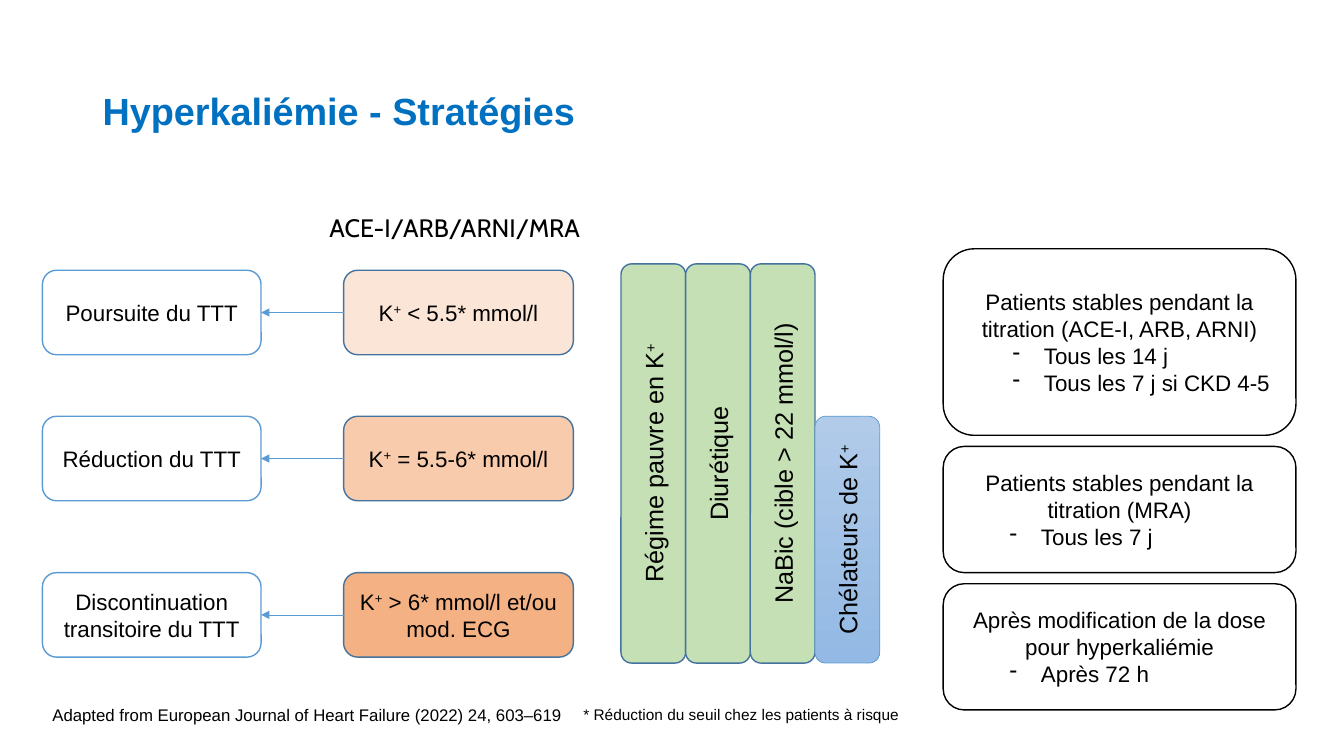
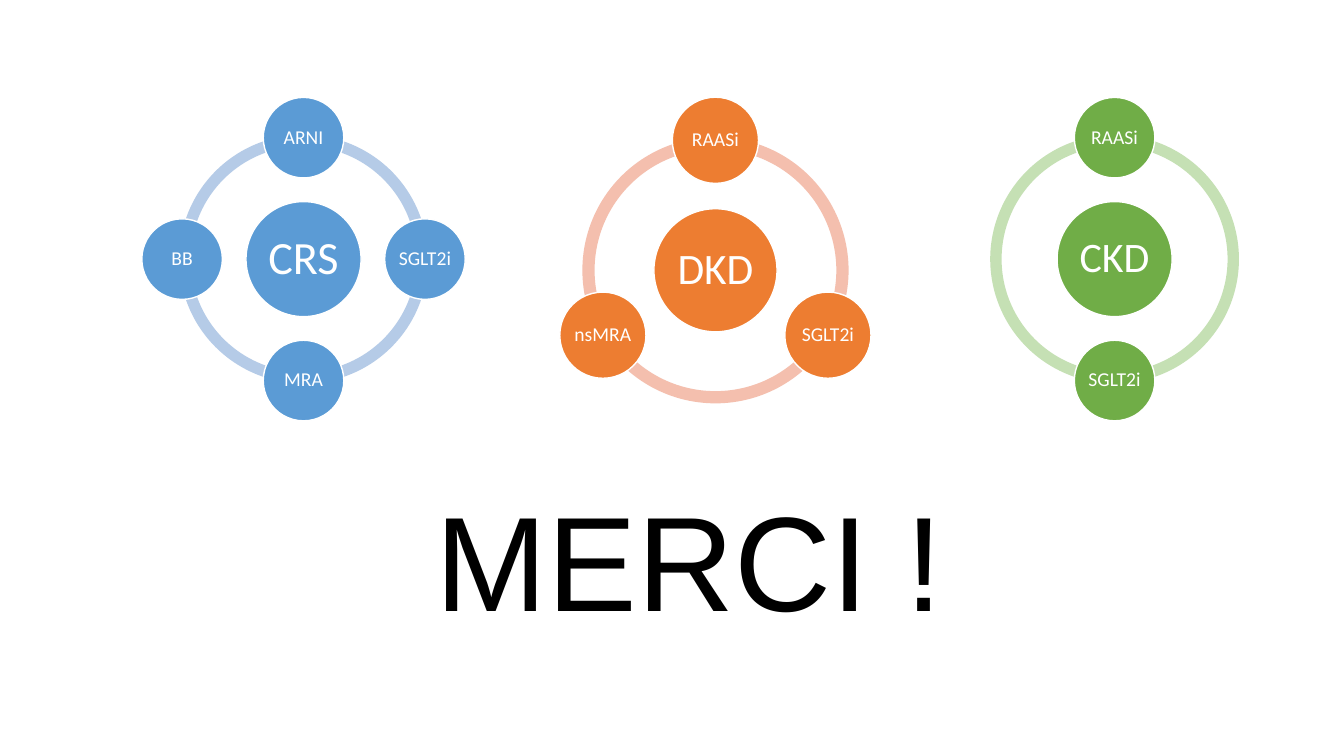
from math import cos, radians, sin

from lxml import etree
from pptx import Presentation
from pptx.dml.color import RGBColor
from pptx.enum.shapes import MSO_CONNECTOR as Connector, MSO_SHAPE as Shape
from pptx.enum.text import MSO_ANCHOR as Anchor, MSO_AUTO_SIZE as AutoSize, PP_ALIGN as Align
from pptx.oxml.ns import qn
from pptx.util import Cm, Pt

# Shared colours and layout
BLACK, WHITE = "000000", "FFFFFF"
TITLE_BLUE, BLUE, DARK_BLUE = "0070C0", "5B9BD5", "43739E"
ORANGE, GREEN, PALE_GREEN = "ED7D31", "70AD47", "C5E0B4"
TITLE_ONLY = 5


def colour(value):
    return RGBColor.from_string(value)


def set_font(para, size, color=BLACK, name="Arial", bold=False):
    para.font.name, para.font.size, para.font.bold = name, Pt(size), bold
    para.font.color.rgb = colour(color)


def add_spans(para, text):
    """Write text; parts between carets are superscript."""
    for index, part in enumerate(text.split("^")):
        if part:
            span = para.add_run()
            span.text = part
            if index % 2:
                span._r.get_or_add_rPr().set("baseline", "30000")


def make_dash_item(para):
    para.level, para.alignment = 1, Align.LEFT
    props = para._p.get_or_add_pPr()
    props.set("marL", str(Cm(2.06)))
    props.set("indent", str(-Cm(0.79)))
    etree.SubElement(props, qn("a:buFontTx"))
    etree.SubElement(props, qn("a:buChar")).set("char", "-")


def fill_text(shape, lines, size, color=BLACK, name="Arial", align=Align.CENTER):
    """Write one paragraph per line; lines starting with "- " become list items."""
    frame = shape.text_frame
    frame.word_wrap, frame.vertical_anchor = True, Anchor.MIDDLE
    for index, line in enumerate(lines):
        para = frame.add_paragraph() if index else frame.paragraphs[0]
        para.alignment = align
        if line.startswith("- "):
            make_dash_item(para)
        add_spans(para, line.removeprefix("- "))
        set_font(para, size, color, name)
    return frame


def add_filled(shapes, kind, left, top, width, height, fill, line=None, weight=1):
    shape = shapes.add_shape(kind, Cm(left), Cm(top), Cm(width), Cm(height))
    shape.shadow.inherit = False
    shape.fill.solid()
    shape.fill.fore_color.rgb = colour(fill)
    if line:
        shape.line.color.rgb = colour(line)
        shape.line.width = Pt(weight)
    else:
        shape.line.fill.background()
    return shape


def add_box(page, place, lines, fill, line, size=16, weight=1):
    box = add_filled(page.shapes, Shape.ROUNDED_RECTANGLE, *place, fill, line, weight)
    fill_text(box, lines, size)
    return box


def add_bar(page, place, text, fill, line=DARK_BLUE, weight=1):
    bar = add_box(page, place, [text], fill, line, 18, weight)
    bar.text_frame._txBody.bodyPr.set("vert", "vert270")
    return bar


def add_label(page, left, top, width, height, text, size, name="Arial"):
    label = page.shapes.add_textbox(Cm(left), Cm(top), Cm(width), Cm(height))
    fill_text(label, [text], size, name=name, align=Align.LEFT)


def add_arrow(page, source, target):
    """Join the left side of source to the right side of target."""
    arrow = page.shapes.add_connector(Connector.STRAIGHT, 0, 0, 0, 0)
    arrow.begin_connect(source, 1)
    arrow.end_connect(target, 3)
    arrow.line.color.rgb = colour(BLUE)
    arrow.line.width = Pt(0.5)
    etree.SubElement(arrow.line._get_or_add_ln(), qn("a:tailEnd")).set("type", "triangle")
    etree.SubElement(arrow._element.spPr, qn("a:effectLst"))


def set_title(page, place, text, size, color=BLACK, bold=False, align=Align.LEFT):
    title = page.shapes.title
    title.left, title.top, title.width, title.height = map(Cm, place)
    frame = fill_text(title, [text], size, align=align)
    frame.auto_size = AutoSize.NONE
    set_font(frame.paragraphs[0], size, color, bold=bold)
    return frame.paragraphs[0]


def add_disc(shapes, x, y, diameter, text, size, fill):
    disc = add_filled(shapes, Shape.OVAL, x - diameter / 2, y - diameter / 2,
                      diameter, diameter, fill, WHITE)
    frame = fill_text(disc, [text], size, WHITE, "Calibri")
    frame.word_wrap = False
    frame.margin_left = frame.margin_right = frame.margin_top = frame.margin_bottom = Cm(0.05)
    frame.paragraphs[0].line_spacing = 0.9


def add_cycle(page, x, y, scale, hub, hub_size, satellites, fill, ring_fill):
    """Draw a hub with satellites spread clockwise from the top of a ring."""
    shapes = page.shapes.add_group_shape().shapes
    ring, orbit = 6.27 * scale, 3.06 * scale
    step = 360 / len(satellites)
    angles = [(270 + step * index) % 360 for index in range(len(satellites))]
    for angle in angles:
        arc = add_filled(shapes, Shape.BLOCK_ARC, x - ring / 2, y - ring / 2,
                         ring, ring, ring_fill)
        # Arc angles are stored in 60000ths of a degree, scaled by 100000
        arc.adjustments[0] = angle * 0.6
        arc.adjustments[1] = (angle + step) % 360 * 0.6
        arc.adjustments[2] = 0.046
    add_disc(shapes, x, y, 2.9 * scale, hub, hub_size, fill)
    for angle, text in zip(angles, satellites):
        add_disc(shapes, x + orbit * cos(radians(angle)), y + orbit * sin(radians(angle)),
                 2.03 * scale, text, 14, fill)


def build_strategies(deck):
    page = deck.slides.add_slide(deck.slide_layouts[TITLE_ONLY])
    title = set_title(page, (2.33, 1.02, 29.21, 3.68), "Hyperkaliémie - Stratégies",
                      27, TITLE_BLUE, bold=True)
    title.line_spacing = 0.9
    add_label(page, 8.05, 5.23, 7.04, 1.02, "ACE-I/ARB/ARNI/MRA", 18, "Cabin")

    # Potassium thresholds and their consequences
    rows = [
        (6.81, "FBE5D6", ["K^+^ < 5.5* mmol/l"], "Poursuite du TTT"),
        (10.49, "F8CBAD", ["K^+^ = 5.5-6* mmol/l"], "Réduction du TTT"),
        (14.43, "F4B183", ["K^+^ > 6* mmol/l et/ou", "mod. ECG"],
         "Discontinuation transitoire du TTT"),
    ]
    for top, fill, threshold, outcome in rows:
        threshold_box = add_box(page, (8.66, top, 5.79, 2.13), threshold, fill, DARK_BLUE)
        outcome_box = add_box(page, (1.07, top, 5.51, 2.13), [outcome], WHITE, BLUE)
        add_arrow(page, threshold_box, outcome_box)

    # Treatment bars
    bars_left, bar_width, bars_bottom = 15.65, 1.63, 16.71
    treatments = ["Régime pauvre en K^+^", "Diurétique", "NaBic (cible > 22 mmol/l)"]
    for index, text in enumerate(treatments):
        add_bar(page, (bars_left + index * bar_width, 6.65, bar_width, bars_bottom - 6.65),
                text, PALE_GREEN)
    binder = add_bar(page, (bars_left + 3 * bar_width, 10.49, bar_width, bars_bottom - 10.49),
                     "Chélateurs de K^+^", BLUE, BLUE, 0.5)
    binder.fill.gradient()
    binder.fill.gradient_angle = 270
    for stop, value in zip(binder.fill.gradient_stops, ("B1CBE9", "93B9E4")):
        stop.color.rgb = colour(value)

    # Monitoring schedule
    schedule = [
        (4.7, ["Patients stables pendant la titration (ACE-I, ARB, ARNI)",
               "- Tous les 14 j", "- Tous les 7 j si CKD 4-5"]),
        (3.18, ["Patients stables pendant la titration (MRA)", "- Tous les 7 j"]),
        (3.18, ["Après modification de la dose pour hyperkaliémie", "- Après 72 h"]),
    ]
    top = 6.27
    for height, lines in schedule:
        add_box(page, (23.77, top, 8.89, height), lines, WHITE, BLACK)
        top += height + 0.28

    # Source and footnote
    add_label(page, 1.07, 17.63, 13.39, 0.76,
              "Adapted from European Journal of Heart Failure (2022) 24, 603–619", 12)
    add_label(page, 14.45, 17.63, 8.51, 0.74,
              "* Réduction du seuil chez les patients à risque", 11)


def build_thanks(deck):
    page = deck.slides.add_slide(deck.slide_layouts[TITLE_ONLY])
    add_cycle(page, 7.65, 6.53, 1, "CRS", 33, ["ARNI", "SGLT2i", "MRA", "BB"],
              BLUE, "B5CBE7")
    add_cycle(page, 18.03, 6.81, 1.07, "DKD", 31, ["RAASi", "SGLT2i", "nsMRA"],
              ORANGE, "F4BFAE")
    add_cycle(page, 28.09, 6.53, 1, "CKD", 30, ["RAASi", "SGLT2i"], GREEN, PALE_GREEN)
    set_title(page, (6.99, 11.86, 20.78, 4.37), "MERCI !", 96, align=Align.CENTER)


def main():
    deck = Presentation()
    deck.slide_width, deck.slide_height = Cm(33.87), Cm(19.05)
    build_strategies(deck)
    build_thanks(deck)
    deck.save("out.pptx")


if __name__ == "__main__":
    main()
